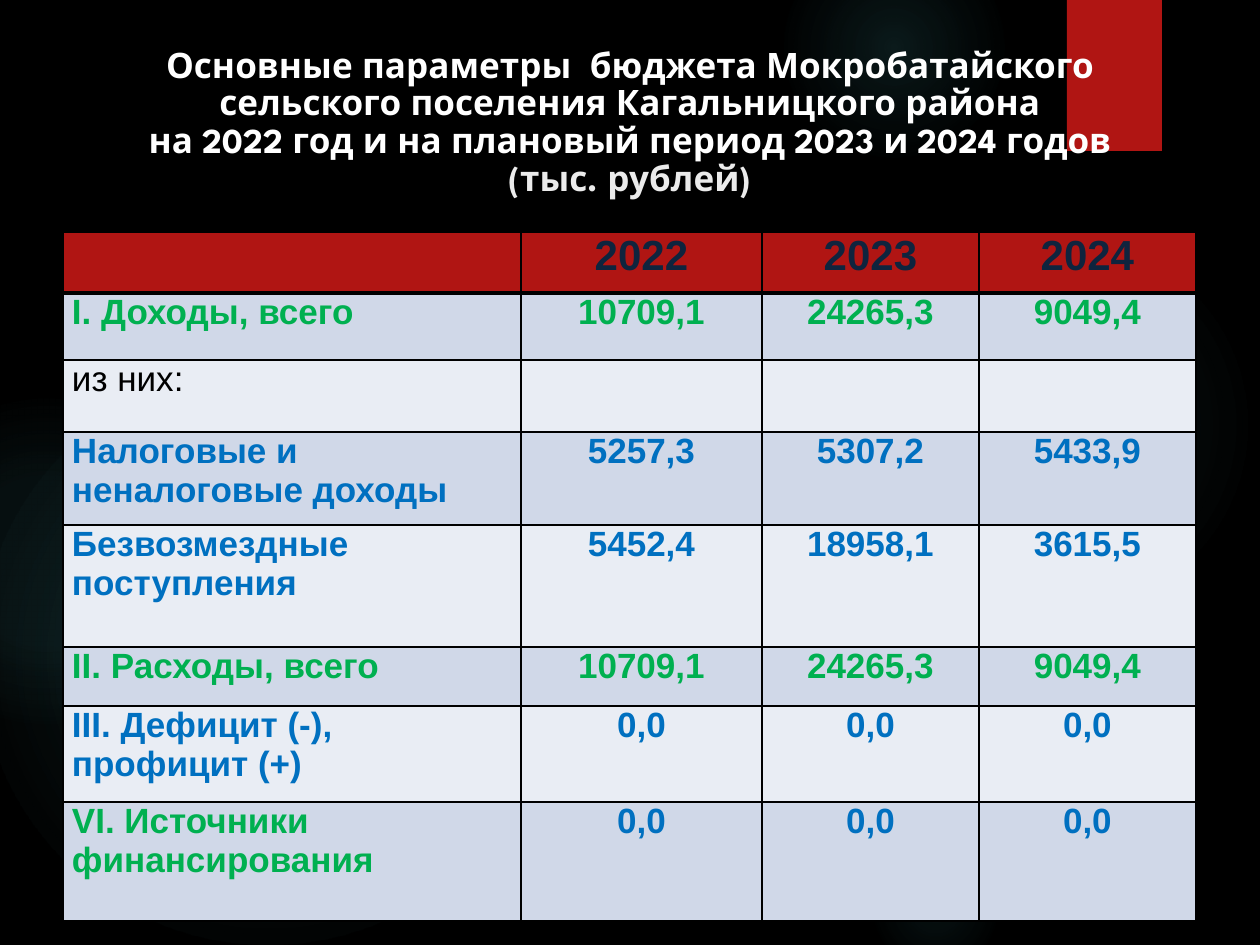
import pptx
import pptx.dml.color
import pptx.enum.shapes
import pptx.enum.text
import pptx.oxml
import pptx.oxml.ns
import pptx.util

RGBColor = pptx.dml.color.RGBColor
MSO_SHAPE = pptx.enum.shapes.MSO_SHAPE
PP_ALIGN = pptx.enum.text.PP_ALIGN

PX = 914400 // 126

BLACK = RGBColor(0x00, 0x00, 0x00)
WHITE = RGBColor(0xFF, 0xFF, 0xFF)
OFF_WHITE = RGBColor(0xEB, 0xEB, 0xEB)
RED = RGBColor(0xB0, 0x15, 0x13)
NAVY = RGBColor(0x0F, 0x24, 0x3E)
GREEN = RGBColor(0x00, 0xB0, 0x50)
BLUE = RGBColor(0x00, 0x70, 0xC0)
BAND_DARK = RGBColor(0xD0, 0xD8, 0xE8)
BAND_LIGHT = RGBColor(0xE9, 0xED, 0xF4)
TEAL = RGBColor(0x50, 0xB9, 0xC1)

# left, top, diameter in px; (position, opacity) stops in percent
GLOWS = [
    (868, 231, 388, [(0, 7), (36, 6), (69, 0)]),
    (784, -63, 220, [(0, 14), (36, 7), (73, 0)]),
    (868, 840, 136, [(0, 9), (36, 5), (66, 0)]),
    (-21, 368, 577, [(0, 11), (36, 10), (75, 0)]),
    (-116, 399, 325, [(0, 8), (36, 8), (72, 0)]),
]

TITLE_LINES = [
    ("Основные параметры  бюджета Мокробатайского сельского поселения "
     "Кагальницкого района", WHITE),
    ("на 2022 год и на плановый период 2023 и 2024 годов", WHITE),
    ("(тыс. рублей)", OFF_WHITE),
]

COLUMN_WIDTHS = [458, 241, 217, 217]
# height in px, label, label colour, values, value colour
BUDGET_ROWS = [
    (61, "", NAVY, ["2022", "2023", "2024"], NAVY),
    (67, "I. Доходы, всего", GREEN, ["10709,1", "24265,3", "9049,4"], GREEN),
    (72, "из них:", BLACK, ["", "", ""], BLACK),
    (93, "Налоговые и неналоговые доходы", BLUE,
     ["5257,3", "5307,2", "5433,9"], BLUE),
    (122, "Безвозмездные поступления", BLUE,
     ["5452,4", "18958,1", "3615,5"], BLUE),
    (59, "II. Расходы, всего", GREEN, ["10709,1", "24265,3", "9049,4"], GREEN),
    (96, "III. Дефицит (-), профицит (+)", BLUE, ["0,0"] * 3, BLUE),
    (119, "VI. Источники финансирования", GREEN, ["0,0"] * 3, BLUE),
]


def px(*lengths):
    return [length * PX for length in lengths]


def set_attributes(target, values):
    for name, value in values.items():
        setattr(target, name, value)


def add_run(paragraph, text, color, **font_values):
    run = paragraph.add_run()
    run.text = text
    set_attributes(run.font, font_values)
    run.font.color.rgb = color


def add_plain_shape(slide, kind, left, top, width, height, color):
    shape = slide.shapes.add_shape(kind, *px(left, top, width, height))
    shape.shadow.inherit = False
    shape.fill.solid()
    shape.fill.fore_color.rgb = color
    shape.line.fill.background()
    return shape


def add_glow(slide, left, top, diameter, stops):
    """Add a circle that fades out from its centre."""
    shape = add_plain_shape(slide, MSO_SHAPE.OVAL, left, top, diameter, diameter, TEAL)
    stop_xml = "".join(
        f'<a:gs pos="{position * 1000}"><a:srgbClr val="{TEAL}">'
        f'<a:alpha val="{opacity * 1000}"/></a:srgbClr></a:gs>'
        for position, opacity in stops)
    gradient = pptx.oxml.parse_xml(
        f'<a:gradFill {pptx.oxml.ns.nsdecls("a")} rotWithShape="1">'
        f'<a:gsLst>{stop_xml}</a:gsLst><a:path path="circle">'
        '<a:fillToRect l="50000" t="50000" r="50000" b="50000"/>'
        '</a:path></a:gradFill>')
    properties = shape.element.spPr
    properties.replace(properties.find(pptx.oxml.ns.qn("a:solidFill")), gradient)


def add_title(slide):
    box = slide.shapes.add_textbox(*px(63, 40, 1134, 227))
    set_attributes(box.text_frame, {"word_wrap": True, "margin_top": 8 * PX})
    paragraph = box.text_frame.paragraphs[0]
    set_attributes(paragraph, {"alignment": PP_ALIGN.CENTER, "line_spacing": 0.9})
    for index, (text, color) in enumerate(TITLE_LINES):
        if index:
            paragraph.add_line_break()
        add_run(paragraph, text, color, name="League Spartan",
                size=pptx.util.Pt(20), bold=True)


def set_borders(cell, widths):
    """Draw black cell borders, given as points by side."""
    properties = cell._tc.get_or_add_tcPr()
    for index, (side, points) in enumerate(widths.items()):
        border = pptx.oxml.parse_xml(
            f'<a:ln{side} {pptx.oxml.ns.nsdecls("a")} w="{pptx.util.Pt(points)}">'
            f'<a:solidFill><a:srgbClr val="{BLACK}"/></a:solidFill></a:ln{side}>')
        properties.insert(index, border)


def fill_cell(cell, text, color, background, alignment, size, bold):
    set_attributes(cell, {"margin_left": 9 * PX, "margin_right": 9 * PX,
                          "margin_top": 0, "margin_bottom": 0})
    cell.fill.solid()
    cell.fill.fore_color.rgb = background
    if text:
        paragraph = cell.text_frame.paragraphs[0]
        paragraph.alignment = alignment
        add_run(paragraph, text, color, name="Arial",
                size=pptx.util.Pt(size), bold=bold)


def add_budget_table(slide):
    heights = [row[0] for row in BUDGET_ROWS]
    frame = slide.shapes.add_table(
        len(heights), len(COLUMN_WIDTHS),
        *px(63, 232, sum(COLUMN_WIDTHS), sum(heights)))
    table = frame.table
    set_attributes(table, {"first_row": False, "horz_banding": False})
    for column, width in zip(table.columns, COLUMN_WIDTHS):
        column.width = width * PX
    for index, (height, label, label_color, values, value_color) in enumerate(BUDGET_ROWS):
        table.rows[index].height = height * PX
        header = index == 0
        background = RED if header else BAND_DARK if index % 2 else BAND_LIGHT
        borders = {"L": 1, "R": 1, "T": 3 if index == 1 else 1, "B": 3 if header else 1}
        texts = [(label, label_color, PP_ALIGN.LEFT)]
        texts += [(value, value_color, PP_ALIGN.CENTER) for value in values]
        for cell, (text, color, alignment) in zip(table.rows[index].cells, texts):
            fill_cell(cell, text, color, background, alignment,
                      size=24 if header else 20, bold=color != BLACK)
            set_borders(cell, borders)


def main():
    presentation = pptx.Presentation()
    set_attributes(presentation, {"slide_width": pptx.util.Inches(10),
                                  "slide_height": pptx.util.Inches(7.5)})
    slide = presentation.slides.add_slide(presentation.slide_layouts[6])
    slide.background.fill.solid()
    slide.background.fill.fore_color.rgb = BLACK
    for glow in GLOWS:
        add_glow(slide, *glow)
    add_plain_shape(slide, MSO_SHAPE.RECTANGLE, 1067, 0, 95, 151, RED)
    add_title(slide)
    add_budget_table(slide)
    presentation.save("out.pptx")


if __name__ == "__main__":
    main()
